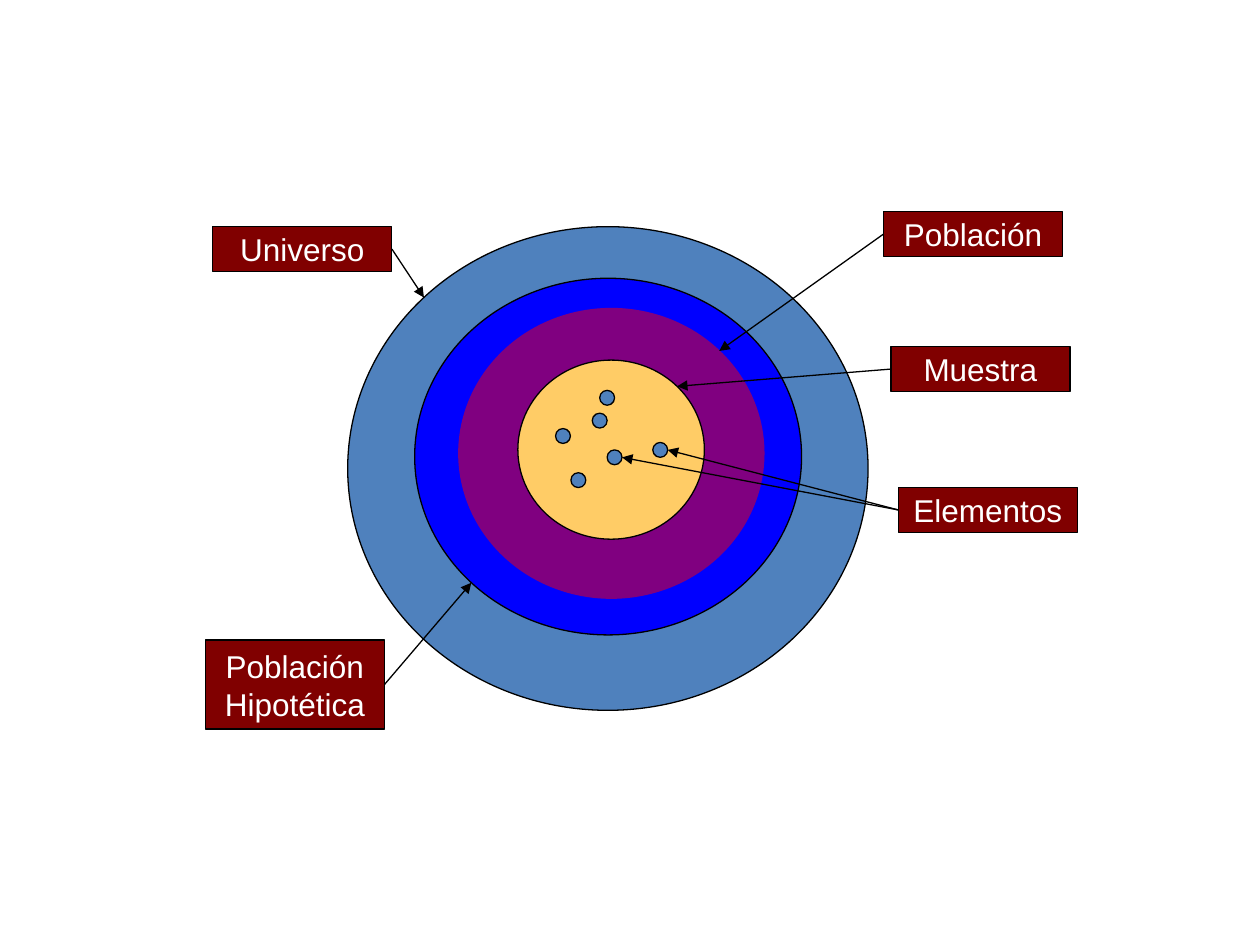
from math import cos, radians, sin

from lxml import etree
from pptx import Presentation
from pptx import util as u
from pptx.dml.color import RGBColor
from pptx.enum import shapes, text
from pptx.oxml.ns import qn


def paint(target, color):
    """Give a fill, a line's fill or a font's fill one solid colour."""
    target.solid()
    target.fore_color.rgb = RGBColor.from_string(color)


def add_figure(page, kind, left, top, width, height, fill, line="000000"):
    figure = page.shapes.add_shape(
        kind, u.Cm(left), u.Cm(top), u.Cm(width), u.Cm(height))
    figure.shadow.inherit = False
    paint(figure.fill, fill)
    paint(figure.line.fill, line)
    figure.line.width = u.Pt(0.75)
    return figure


OVAL = shapes.MSO_SHAPE.OVAL
RECTANGLE = shapes.MSO_SHAPE.RECTANGLE
DOT_SIZE = 0.3
LABEL_WIDTH = 3.61

deck = Presentation()
deck.slide_width, deck.slide_height = u.Cm(25.4), u.Cm(19.05)
page = deck.slides.add_slide(deck.slide_layouts[6])

# Nested sets, from the widest to the narrowest
rings = [add_figure(page, OVAL, *ring) for ring in (
    (7.01, 4.57, 10.49, 9.75, "4F81BD"),
    (8.36, 5.61, 7.8, 7.19, "0000FF"),
    (9.25, 6.22, 6.15, 5.84, "800080", "800080"),
    (10.44, 7.26, 3.76, 3.61, "FFCC66"),
)]
universe, hypothetical, population, sample = rings

dots = [add_figure(page, OVAL, left, top, DOT_SIZE, DOT_SIZE, "4F81BD")
        for left, top in ((12.09, 7.87), (11.94, 8.33), (13.16, 8.92),
                          (11.51, 9.53), (11.2, 8.64), (12.24, 9.07))]

# Label text, left, top, height, wrap, side the arrows leave from,
# targets, and the angle where arrows touch them (clockwise from the right)
labels = (
    ("Universo", 4.29, 4.57, 0.9, False, "right", [universe], 225),
    ("Población Hipotética", 4.14, 12.9, 1.8, True, "right", [hypothetical], 135),
    ("Población", 17.81, 4.27, 0.9, False, "left", [population], 315),
    ("Muestra", 17.96, 6.99, 0.9, False, "left", [sample], 315),
    ("Elementos", 18.11, 9.83, 0.9, False, "left", [dots[2], dots[5]], 0),
)
frame_format = {"vertical_anchor": text.MSO_ANCHOR.MIDDLE}
font_format = {"name": "Arial", "size": u.Pt(18)}

for caption, left, top, height, wrap, side, targets, angle in labels:
    box = add_figure(page, RECTANGLE, left, top, LABEL_WIDTH, height, "800000")
    frame = box.text_frame
    frame.word_wrap = wrap
    for name, value in frame_format.items():
        setattr(frame, name, value)
    para = frame.paragraphs[0]
    para.alignment = text.PP_ALIGN.CENTER
    span = para.add_run()
    span.text = caption
    for name, value in font_format.items():
        setattr(span.font, name, value)
    paint(span.font.fill, "FFFFFF")

    start_x = box.left + (box.width if side == "right" else 0)
    start_y = box.top + box.height // 2
    for target in targets:
        end_x = target.left + target.width / 2 * (1 + cos(radians(angle)))
        end_y = target.top + target.height / 2 * (1 + sin(radians(angle)))
        arrow = page.shapes.add_connector(
            shapes.MSO_CONNECTOR.STRAIGHT, start_x, start_y, int(end_x), int(end_y))
        paint(arrow.line.fill, "000000")
        arrow.line.width = u.Pt(0.75)
        etree.SubElement(arrow.line._get_or_add_ln(), qn("a:tailEnd"), type="triangle")
        etree.SubElement(arrow._element.spPr, qn("a:effectLst"))

deck.save("out.pptx")
